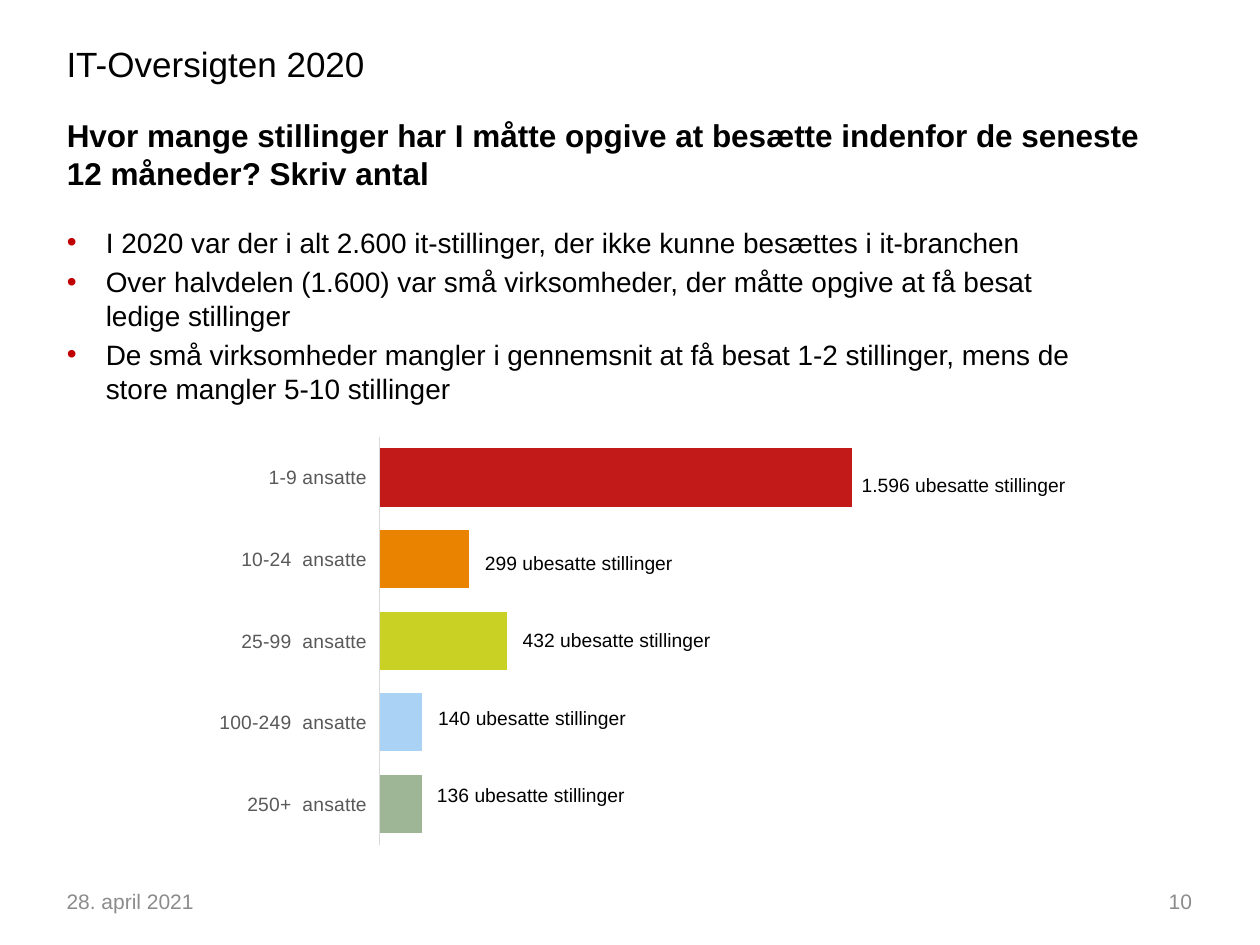
from lxml.etree import SubElement
from pptx import Presentation
from pptx.chart.data import CategoryChartData
from pptx.dml.color import RGBColor
from pptx.enum.chart import XL_CHART_TYPE, XL_TICK_LABEL_POSITION, XL_TICK_MARK
from pptx.enum.text import MSO_ANCHOR, MSO_AUTO_SIZE, PP_ALIGN
from pptx.oxml import parse_xml
from pptx.oxml.ns import nsdecls, qn
from pptx.util import Inches, Pt

BLACK = RGBColor(0x00, 0x00, 0x00)
GREY = RGBColor(0x8C, 0x8C, 0x8C)
DARK = RGBColor(0x59, 0x59, 0x59)
LINE = RGBColor(0xD9, 0xD9, 0xD9)
BULLET = RGBColor(0xC0, 0x00, 0x00)
RED = RGBColor(0xC2, 0x19, 0x19)
ORANGE = RGBColor(0xE9, 0x83, 0x00)
LIME = RGBColor(0xC8, 0xD1, 0x24)
BLUE = RGBColor(0xAA, 0xD2, 0xF5)
SAGE = RGBColor(0x9E, 0xB6, 0x96)

# Staff group, bar value, bar colour, open posts, label left and width
ROWS = [
    ("1-9 ansatte", 100, RED, "1.596", 6.74, 1.83),
    ("10-24  ansatte", 19, ORANGE, "299", 3.75, 1.7),
    ("25-99  ansatte", 27, LIME, "432", 4.05, 1.7),
    ("100-249  ansatte", 9, BLUE, "140", 3.38, 1.7),
    ("250+  ansatte", 9, SAGE, "136", 3.37, 1.7),
]
POINTS = [
    "I 2020 var der i alt 2.600 it-stillinger, der ikke kunne besættes i it-branchen",
    "Over halvdelen (1.600) var små virksomheder, der måtte opgive at få besat "
    "ledige stillinger",
    "De små virksomheder mangler i gennemsnit at få besat 1-2 stillinger, "
    "mens de store mangler 5-10 stillinger",
]


def write(para, text, size=16, color=BLACK, bold=False, align=PP_ALIGN.LEFT,
          before=0, bullet=None):
    para.alignment = align
    para.space_before = Pt(before)
    if bullet:
        props = para._p.get_or_add_pPr()
        props.set("marL", str(Inches(0.31)))
        props.set("indent", str(-Inches(0.31)))
        tint = SubElement(props, qn("a:buClr"))
        SubElement(tint, qn("a:srgbClr"), val=str(bullet))
        SubElement(props, qn("a:buFont"), typeface="Arial")
        SubElement(props, qn("a:buChar"), char="•")
    run = para.add_run()
    run.text = text
    font = run.font
    font.name, font.size, font.bold = "Arial", Pt(size), bold
    font.color.rgb = color


def place(shape, left, top, width, height):
    shape.left, shape.top = Inches(left), Inches(top)
    shape.width, shape.height = Inches(width), Inches(height)


class Deck:
    def __init__(self):
        self.prs = Presentation()
        self.prs.slide_width, self.prs.slide_height = Inches(10), Inches(7.5)
        self.slide = self.prs.slides.add_slide(self.prs.slide_layouts[1])

    def frame(self, shape, anchor=MSO_ANCHOR.TOP, wrap=True):
        frame = shape.text_frame
        frame.word_wrap, frame.vertical_anchor = wrap, anchor
        frame.auto_size = MSO_AUTO_SIZE.NONE
        return frame

    def title(self, text, *box):
        shape = self.slide.shapes.title
        place(shape, *box)
        write(self.frame(shape).paragraphs[0], text, size=18, bold=True)

    def body(self, items, *box):
        shape = self.slide.placeholders[1]
        place(shape, *box)
        frame = self.frame(shape)
        for num, item in enumerate(items):
            para = frame.add_paragraph() if num else frame.paragraphs[0]
            write(para, item, before=3.2 if num else 0, bullet=BULLET)

    def text(self, text, *box, anchor=MSO_ANCHOR.TOP, wrap=True, **style):
        shape = self.slide.shapes.add_textbox(*map(Inches, box))
        write(self.frame(shape, anchor, wrap).paragraphs[0], text, **style)

    def bars(self, rows, *box):
        data = CategoryChartData()
        data.categories = [row[0] for row in rows]
        data.add_series("Series 1", [row[1] for row in rows])
        chart = self.slide.shapes.add_chart(
            XL_CHART_TYPE.BAR_CLUSTERED, *map(Inches, box), data).chart
        chart.has_legend = chart.has_title = False
        chart.font.name, chart.font.size = "Arial", Pt(10)
        chart.font.color.rgb = BLACK

        plot = chart.plots[0]
        plot.gap_width, plot.overlap = 40, -25
        plot.vary_by_categories = False
        series = plot.series[0]
        series.format.fill.solid()
        series.format.fill.fore_color.rgb = RED
        for num, row in enumerate(rows):
            fill = series.points[num].format.fill
            fill.solid()
            fill.fore_color.rgb = row[2]

        axis = chart.category_axis
        axis.major_tick_mark = axis.minor_tick_mark = XL_TICK_MARK.NONE
        axis.tick_label_position = XL_TICK_LABEL_POSITION.LOW
        font = axis.tick_labels.font
        font.name, font.size, font.color.rgb = "Arial", Pt(11), DARK
        axis.format.line.color.rgb = LINE
        axis.format.line.width = Pt(0.75)
        scale = chart.value_axis
        scale.minimum_scale, scale.maximum_scale = 0, 110
        scale.has_major_gridlines = scale.visible = False
        self.fit(chart, x=0.235, y=0.02, w=0.727, h=0.958)

    def fit(self, chart, **parts):
        """Fix the inner plot area, as shares of the chart."""
        area = chart._chartSpace.chart.plotArea
        for old in area.findall(qn("c:layout")):
            area.remove(old)
        tags = "".join(f'<c:{key} val="{val}"/>' for key, val in parts.items())
        area.insert(0, parse_xml(
            f'<c:layout {nsdecls("c")}><c:manualLayout>'
            '<c:layoutTarget val="inner"/><c:xMode val="edge"/>'
            f'<c:yMode val="edge"/>{tags}</c:manualLayout></c:layout>'))


def main():
    deck = Deck()
    deck.text("IT-Oversigten 2020", 0.43, 0.29, 3.17, 0.4, size=20)
    deck.title("Hvor mange stillinger har I måtte opgive at besætte indenfor "
               "de seneste 12 måneder? Skriv antal", 0.43, 0.87, 9, 0.55)
    deck.body(POINTS, 0.43, 1.74, 8.23, 1.51)
    deck.bars(ROWS[::-1], 1.68, 3.4, 5.67, 3.38)
    for num, (_, _, _, count, left, width) in enumerate(ROWS):
        deck.text(f"{count} ubesatte stillinger", left, 3.71 + 0.615 * num,
                  width, 0.29, size=11, wrap=False)
    foot = dict(anchor=MSO_ANCHOR.MIDDLE, size=12, color=GREY)
    deck.text("28. april 2021", 0.43, 6.95, 2.33, 0.4, **foot)
    deck.text("10", 7.23, 6.95, 2.33, 0.4, align=PP_ALIGN.RIGHT, **foot)
    deck.prs.save("out.pptx")


if __name__ == "__main__":
    main()
